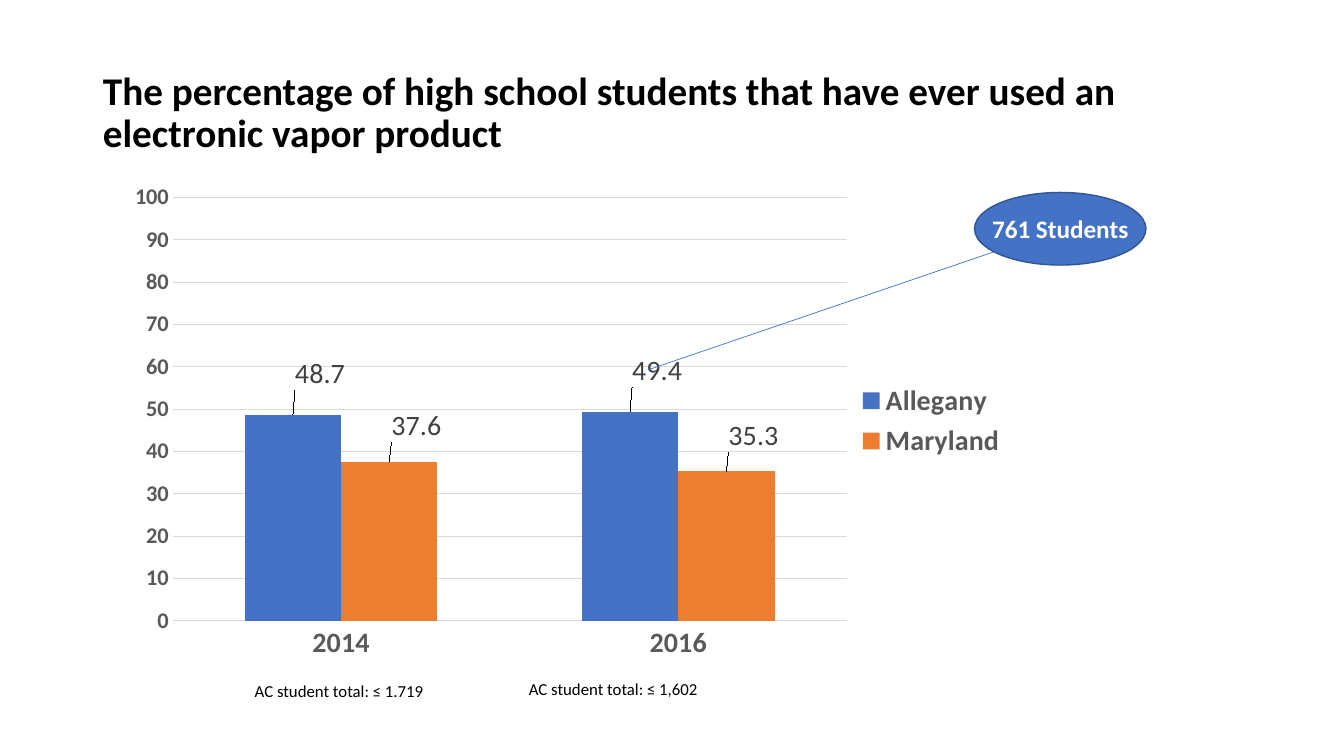
from copy import deepcopy

from pptx import Presentation
from pptx.chart.data import CategoryChartData
from pptx.dml.color import RGBColor
from pptx.enum.chart import XL_CHART_TYPE, XL_LABEL_POSITION, XL_LEGEND_POSITION, XL_TICK_MARK
from pptx.enum.shapes import MSO_CONNECTOR, MSO_SHAPE
from pptx.enum.text import MSO_ANCHOR, MSO_AUTO_SIZE, PP_ALIGN
from pptx.oxml import parse_xml
from pptx.oxml.ns import nsdecls, qn
from pptx.util import Cm, Pt

BLACK = RGBColor(0x00, 0x00, 0x00)
WHITE = RGBColor(0xFF, 0xFF, 0xFF)
BLUE = RGBColor(0x44, 0x72, 0xC4)
DARK_BLUE = RGBColor(0x32, 0x54, 0x91)
ORANGE = RGBColor(0xED, 0x7D, 0x31)
AXIS_GRAY = RGBColor(0x59, 0x59, 0x59)
LABEL_GRAY = RGBColor(0x40, 0x40, 0x40)
GRID_GRAY = RGBColor(0xD9, 0xD9, 0xD9)

TITLE = {"size": Pt(28), "bold": True}
AXIS = {"size": Pt(16), "bold": True}
LARGE_AXIS = {"size": Pt(20), "bold": True}
VALUE = {"size": Pt(20), "bold": False}
CALLOUT = {"size": Pt(18), "bold": True}
NOTE = {"size": Pt(12), "bold": False}

YEARS = ["2014", "2016"]
# Name, values, fill, and shift of the value labels as shares of the chart
SERIES = [
    ("Allegany", (48.7, 49.4), BLUE, (0.03, -0.04)),
    ("Maryland", (37.6, 35.3), ORANGE, (0.03, -0.03)),
]


def set_font(font, style, color):
    for name, value in {"name": "Calibri", **style}.items():
        setattr(font, name, value)
    font.color.rgb = color


def manual_layout(**values):
    items = "".join(f'<c:{name} val="{value}"/>' for name, value in values.items())
    return f'<c:layout {nsdecls("c")}><c:manualLayout>{items}</c:manualLayout></c:layout>'


def add_title(slide, box, text):
    title = slide.shapes.title
    title.left, title.top, title.width, title.height = (Cm(v) for v in box)
    tf = title.text_frame
    tf.text = text
    tf.word_wrap = True
    tf.auto_size = MSO_AUTO_SIZE.NONE
    tf.vertical_anchor = MSO_ANCHOR.MIDDLE
    p = tf.paragraphs[0]
    p.alignment = PP_ALIGN.LEFT
    p.line_spacing = 0.9
    set_font(p.runs[0].font, TITLE, BLACK)


def add_text(slide, box, text, style, color, align=PP_ALIGN.LEFT):
    tf = slide.shapes.add_textbox(*(Cm(v) for v in box)).text_frame
    tf.word_wrap = True
    tf.auto_size = MSO_AUTO_SIZE.SHAPE_TO_FIT_TEXT
    p = tf.paragraphs[0]
    p.alignment = align
    r = p.add_run()
    r.text = text
    set_font(r.font, style, color)


def label_series(series, shift):
    labels = series.data_labels
    labels.show_value = True
    labels.position = XL_LABEL_POSITION.OUTSIDE_END
    set_font(labels.font, VALUE, LABEL_GRAY)
    # Each point carries its own label, moved off the bar
    dLbls = labels._element
    shown = deepcopy(list(dLbls))
    for i in range(len(YEARS)):
        dLbl = parse_xml(f'<c:dLbl {nsdecls("c")}><c:idx val="{i}"/></c:dLbl>')
        dLbl.append(parse_xml(manual_layout(x=shift[0], y=shift[1])))
        dLbl.extend(e for e in deepcopy(shown) if e.tag != qn("c:showLeaderLines"))
        dLbls.insert(i, dLbl)


def add_usage_chart(slide, box):
    data = CategoryChartData(number_format="General")
    data.categories = YEARS
    for name, values, _, _ in SERIES:
        data.add_series(name, values)
    chart = slide.shapes.add_chart(
        XL_CHART_TYPE.COLUMN_CLUSTERED, *(Cm(v) for v in box), data).chart
    chart.has_title = False
    set_font(chart.font, {"size": Pt(10)}, BLACK)

    # Columns and value labels
    plot = chart.plots[0]
    plot.gap_width = 150
    plot.overlap = 0
    plot.vary_by_categories = False
    for series, (_, _, color, shift) in zip(plot.series, SERIES):
        series.format.fill.solid()
        series.format.fill.fore_color.rgb = color
        label_series(series, shift)

    # Axes
    for axis, style in ((chart.category_axis, LARGE_AXIS), (chart.value_axis, AXIS)):
        axis.major_tick_mark = axis.minor_tick_mark = XL_TICK_MARK.NONE
        axis.format.line.fill.background()
        set_font(axis.tick_labels.font, style, AXIS_GRAY)
    axis = chart.value_axis
    axis.minimum_scale, axis.maximum_scale, axis.major_unit = 0, 100, 10
    grid = axis.major_gridlines.format.line
    grid.color.rgb = GRID_GRAY
    grid.width = Pt(0.75)

    # Legend
    chart.has_legend = True
    chart.legend.position = XL_LEGEND_POSITION.RIGHT
    chart.legend.include_in_layout = False
    set_font(chart.legend.font, LARGE_AXIS, AXIS_GRAY)

    # Plot area
    area = chart._chartSpace.chart.plotArea
    for old in area.findall(qn("c:layout")):
        area.remove(old)
    area.insert(0, parse_xml(manual_layout(
        layoutTarget="inner", xMode="edge", yMode="edge",
        x=0.067, y=0.056, w=0.745, h=0.842)))


def add_callout(slide, box, target, text):
    left, top, width, height = box
    # Leader line from the column label to the ellipse
    line = slide.shapes.add_connector(
        MSO_CONNECTOR.STRAIGHT, *(Cm(v) for v in target),
        Cm(left + 0.16 * width), Cm(top + 0.78 * height))
    line.line.color.rgb = BLUE
    line.line.width = Pt(0.5)
    line._element.spPr.append(parse_xml(f'<a:effectLst {nsdecls("a")}/>'))
    # Ellipse and its caption
    sp = slide.shapes.add_shape(MSO_SHAPE.OVAL, *(Cm(v) for v in box))
    sp.shadow.inherit = False
    sp.fill.solid()
    sp.fill.fore_color.rgb = BLUE
    sp.line.color.rgb = DARK_BLUE
    sp.line.width = Pt(1)
    add_text(slide, (left, top + 0.41, width, 1.02), text, CALLOUT, WHITE,
             PP_ALIGN.CENTER)


def main():
    prs = Presentation()
    prs.slide_width, prs.slide_height = Cm(33.87), Cm(19.05)
    slide = prs.slides.add_slide(prs.slide_layouts[5])
    add_title(slide, (2.34, 1.02, 29.21, 3.68),
              "The percentage of high school students that have ever used "
              "an electronic vapor product")
    add_usage_chart(slide, (2.82, 4.27, 22.81, 12.67))
    add_callout(slide, (24.56, 4.85, 4.32, 1.83), (16.33, 9.32), "761 Students")
    # Student totals under the years
    add_text(slide, (6.17, 17.02, 4.88, 0.76), "AC student total: ≤ 1.719", NOTE, BLACK)
    add_text(slide, (13.08, 16.99, 4.88, 0.76), "AC student total: ≤ 1,602", NOTE, BLACK)
    prs.save("out.pptx")


if __name__ == "__main__":
    main()
